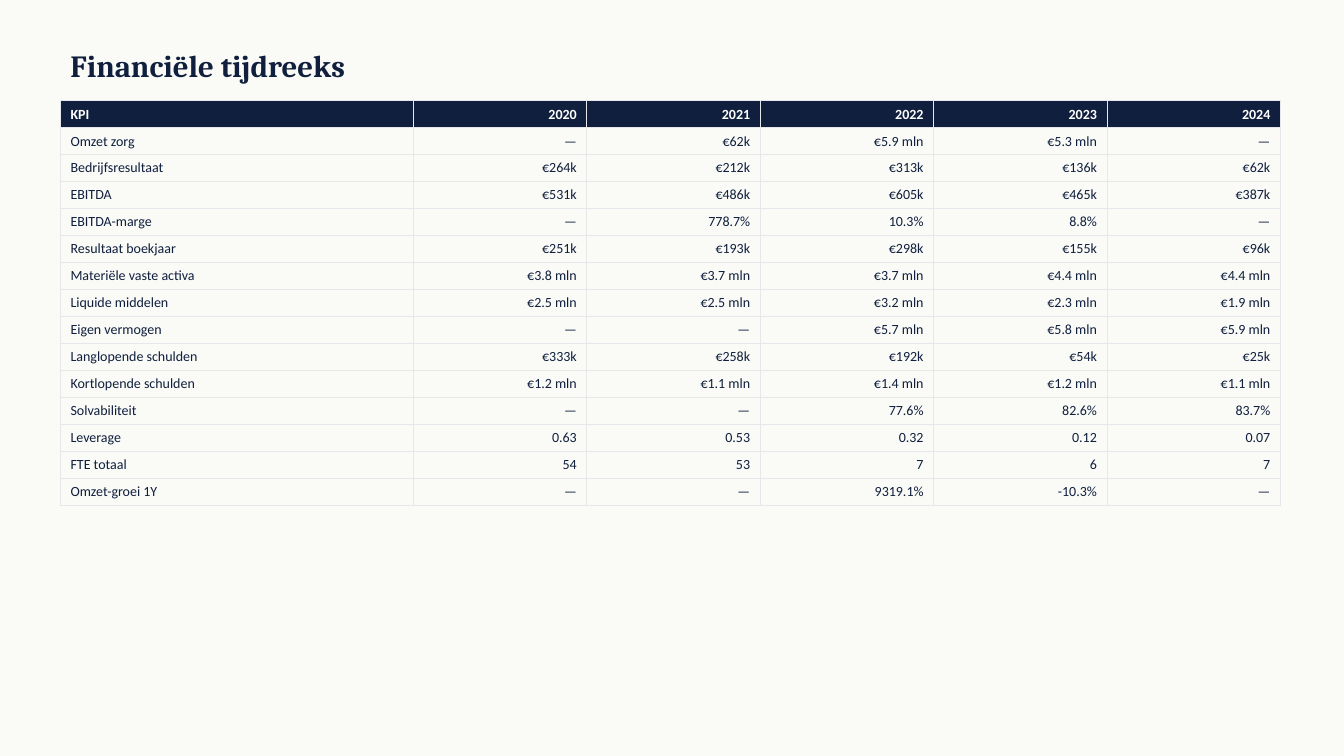
from lxml import etree
from pptx import Presentation
from pptx import util as u
from pptx.dml.color import RGBColor
from pptx.enum import text
from pptx.oxml import ns

COLORS = {"paper": "FAFAF7", "navy": "0F1F3D", "white": "FFFFFF", "grid": "E5E7EB"}

HEADER = ["KPI", "2020", "2021", "2022", "2023", "2024"]
KPIS = [
    ["Omzet zorg", "—", "€62k", "€5.9 mln", "€5.3 mln", "—"],
    ["Bedrijfsresultaat", "€264k", "€212k", "€313k", "€136k", "€62k"],
    ["EBITDA", "€531k", "€486k", "€605k", "€465k", "€387k"],
    ["EBITDA-marge", "—", "778.7%", "10.3%", "8.8%", "—"],
    ["Resultaat boekjaar", "€251k", "€193k", "€298k", "€155k", "€96k"],
    ["Materiële vaste activa", "€3.8 mln", "€3.7 mln", "€3.7 mln", "€4.4 mln", "€4.4 mln"],
    ["Liquide middelen", "€2.5 mln", "€2.5 mln", "€3.2 mln", "€2.3 mln", "€1.9 mln"],
    ["Eigen vermogen", "—", "—", "€5.7 mln", "€5.8 mln", "€5.9 mln"],
    ["Langlopende schulden", "€333k", "€258k", "€192k", "€54k", "€25k"],
    ["Kortlopende schulden", "€1.2 mln", "€1.1 mln", "€1.4 mln", "€1.2 mln", "€1.1 mln"],
    ["Solvabiliteit", "—", "—", "77.6%", "82.6%", "83.7%"],
    ["Leverage", "0.63", "0.53", "0.32", "0.12", "0.07"],
    ["FTE totaal", "54", "53", "7", "6", "7"],
    ["Omzet-groei 1Y", "—", "—", "9319.1%", "-10.3%", "—"],
]


def rgb(name):
    return RGBColor.from_string(COLORS[name])


class Deck:
    heading_font = "Cambria"
    body_font = "Calibri"

    def __init__(self, width, height):
        self.prs = Presentation()
        self.prs.slide_width = u.Inches(width)
        self.prs.slide_height = u.Inches(height)
        self.slide = None

    def add_slide(self):
        self.slide = self.prs.slides.add_slide(self.prs.slide_layouts[6])
        fill = self.slide.background.fill
        fill.solid()
        fill.fore_color.rgb = rgb("paper")

    def set_text(self, tf, words, font, size, color, bold, align=text.PP_ALIGN.LEFT):
        p = tf.paragraphs[0]
        p.text = words
        p.alignment = align
        p.font.name = font
        p.font.size = u.Pt(size)
        p.font.bold = bold
        p.font.color.rgb = rgb(color)

    def title(self, words, left, top, width, height):
        sp = self.slide.shapes.add_textbox(*map(u.Inches, (left, top, width, height)))
        tf = sp.text_frame
        tf.word_wrap = True
        tf.vertical_anchor = text.MSO_ANCHOR.MIDDLE
        self.set_text(tf, words, self.heading_font, 22, "navy", True)

    def borders(self, cell):
        tc_pr = cell._tc.get_or_add_tcPr()
        for side in ("lnL", "lnR", "lnT", "lnB"):
            ln = etree.SubElement(tc_pr, ns.qn(f"a:{side}"), w=str(u.Pt(0.5)))
            solid = etree.SubElement(ln, ns.qn("a:solidFill"))
            etree.SubElement(solid, ns.qn("a:srgbClr"), val=COLORS["grid"])

    def table(self, rows, left, top, col_widths, row_height):
        """First row is the header; columns after the first are right-aligned."""
        size = (sum(col_widths), row_height * len(rows))
        frame = self.slide.shapes.add_table(
            len(rows), len(col_widths), *map(u.Inches, (left, top, *size)))
        table = frame.table
        table.first_row = table.horz_banding = False
        for column, width in zip(table.columns, col_widths):
            column.width = u.Inches(width)
        for i, row in enumerate(rows):
            table.rows[i].height = u.Inches(row_height)
            for j, words in enumerate(row):
                cell = table.cell(i, j)
                self.borders(cell)
                if i == 0:
                    cell.fill.solid()
                    cell.fill.fore_color.rgb = rgb("navy")
                else:
                    cell.fill.background()
                self.set_text(cell.text_frame, words, self.body_font, 10,
                              "navy" if i else "white", i == 0,
                              text.PP_ALIGN.RIGHT if j else text.PP_ALIGN.LEFT)


def main():
    deck = Deck(13.33, 7.5)
    deck.add_slide()
    deck.title("Financiële tijdreeks", 0.6, 0.4, 12, 0.5)
    # Rows grow to the height of their text
    deck.table([HEADER] + KPIS, 0.6, 1, [3.5] + [1.72] * 5, 0.25)
    deck.prs.save("out.pptx")


if __name__ == "__main__":
    main()
